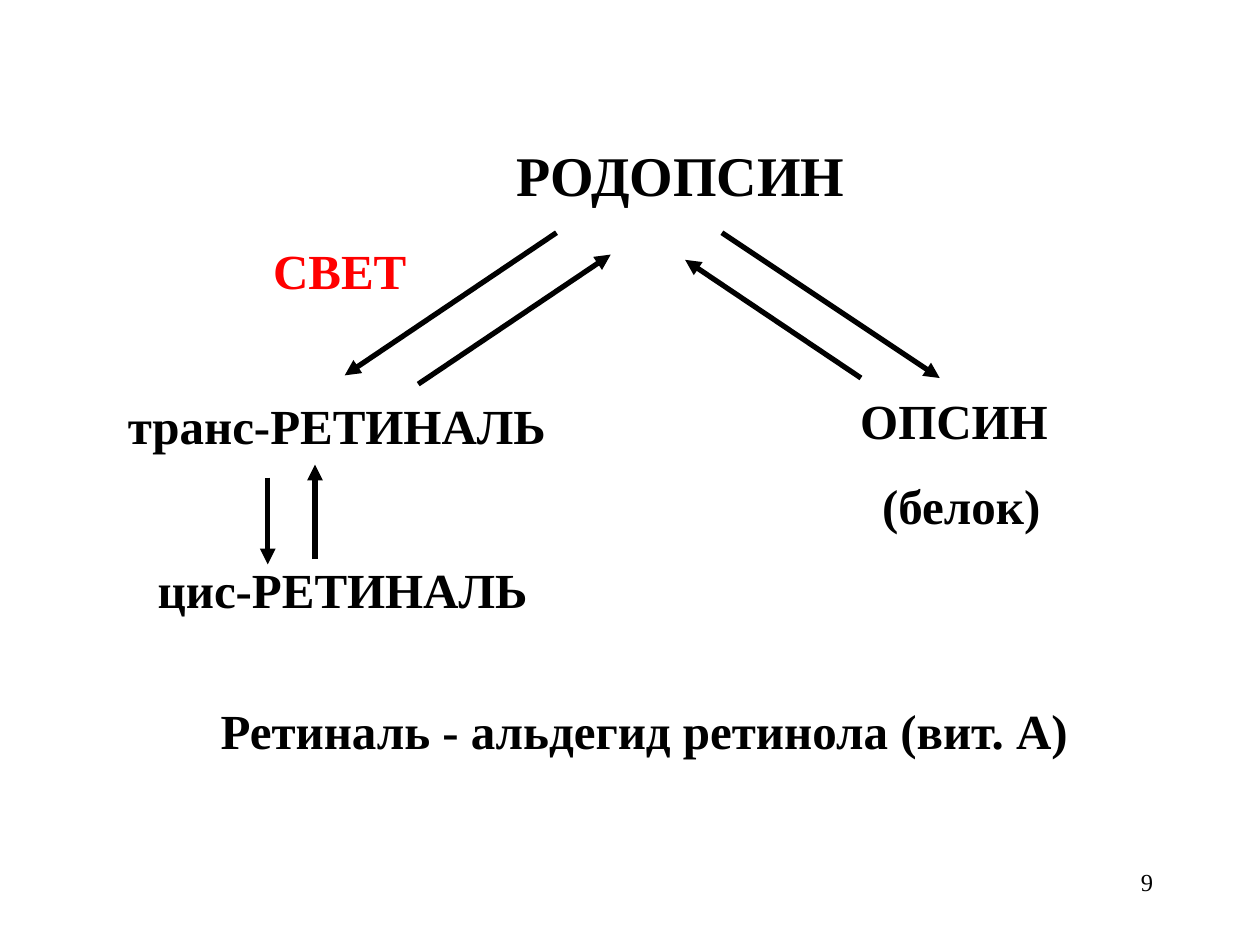
from lxml import etree
from pptx import Presentation
from pptx.dml.color import RGBColor
from pptx.enum.shapes import MSO_CONNECTOR
from pptx.enum.text import MSO_AUTO_SIZE, PP_ALIGN
from pptx.oxml.ns import qn
from pptx.util import Pt

LINE = MSO_CONNECTOR.STRAIGHT
GROW = MSO_AUTO_SIZE.SHAPE_TO_FIT_TEXT
RIGHT = PP_ALIGN.RIGHT
FONT = "Times New Roman"
COLORS = {"ink": "000000", "light": "FF0000"}

# Text, left, top, width, height, size, colour
LABELS = [
    ("РОДОПСИН", 288, 76.5, 204, 45.5, 32, "ink"),
    ("СВЕТ", 149, 134, 91, 41, 28, "light"),
    ("транс-РЕТИНАЛЬ", 66, 222.5, 288, 41, 28, "ink"),
    ("цис-РЕТИНАЛЬ", 83, 316, 226, 41, 28, "ink"),
    ("ОПСИН", 484.5, 219.5, 122, 41, 28, "ink"),
    ("(белок)", 497, 268, 106, 41, 28, "ink"),
    ("Ретиналь - альдегид ретинола (вит. А)", 119, 397, 502, 41, 28, "ink"),
]

# Start x, y and end x, y
ARROWS = [
    (318, 133, 197, 214.5),  # rhodopsin and retinal
    (239, 219.5, 349, 145.5),
    (412.5, 133, 537, 216),  # rhodopsin and opsin
    (492, 216, 391.5, 148.5),
    (153, 273, 153, 322.5),  # trans and cis forms
    (180, 319.5, 180, 265.5),
]


def add_text(slide, text, x, y, w, h, size, color):
    box = slide.shapes.add_textbox(Pt(x), Pt(y), Pt(w), Pt(h))
    par = box.text_frame.paragraphs[0]
    par.text = text
    par.font.name = FONT
    par.font.size = Pt(size)
    par.font.color.rgb = RGBColor.from_string(COLORS[color])
    return box.text_frame


def add_label(slide, *label):
    frame = add_text(slide, *label)
    frame.word_wrap = False
    frame.auto_size = GROW
    frame.paragraphs[0].font.bold = True


def add_arrow(slide, *ends):
    arrow = slide.shapes.add_connector(LINE, *map(Pt, ends))
    arrow.line.width = Pt(3)
    arrow.line.color.rgb = RGBColor.from_string(COLORS["ink"])
    tip = etree.SubElement(arrow.line._get_or_add_ln(), qn("a:tailEnd"))
    tip.set("type", "triangle")
    etree.SubElement(arrow._element.spPr, qn("a:effectLst"))


def add_number(slide, text):
    frame = add_text(slide, text, 516, 492, 150, 36, 14, "ink")
    frame.word_wrap = True
    frame.paragraphs[0].alignment = RIGHT


def main():
    deck = Presentation()
    deck.slide_width, deck.slide_height = Pt(720), Pt(540)
    slide = deck.slides.add_slide(deck.slide_layouts[6])

    # Scheme of the visual cycle
    for label in LABELS:
        add_label(slide, *label)
    for ends in ARROWS:
        add_arrow(slide, *ends)

    # Slide number
    add_number(slide, "9")
    deck.save("out.pptx")


if __name__ == "__main__":
    main()
